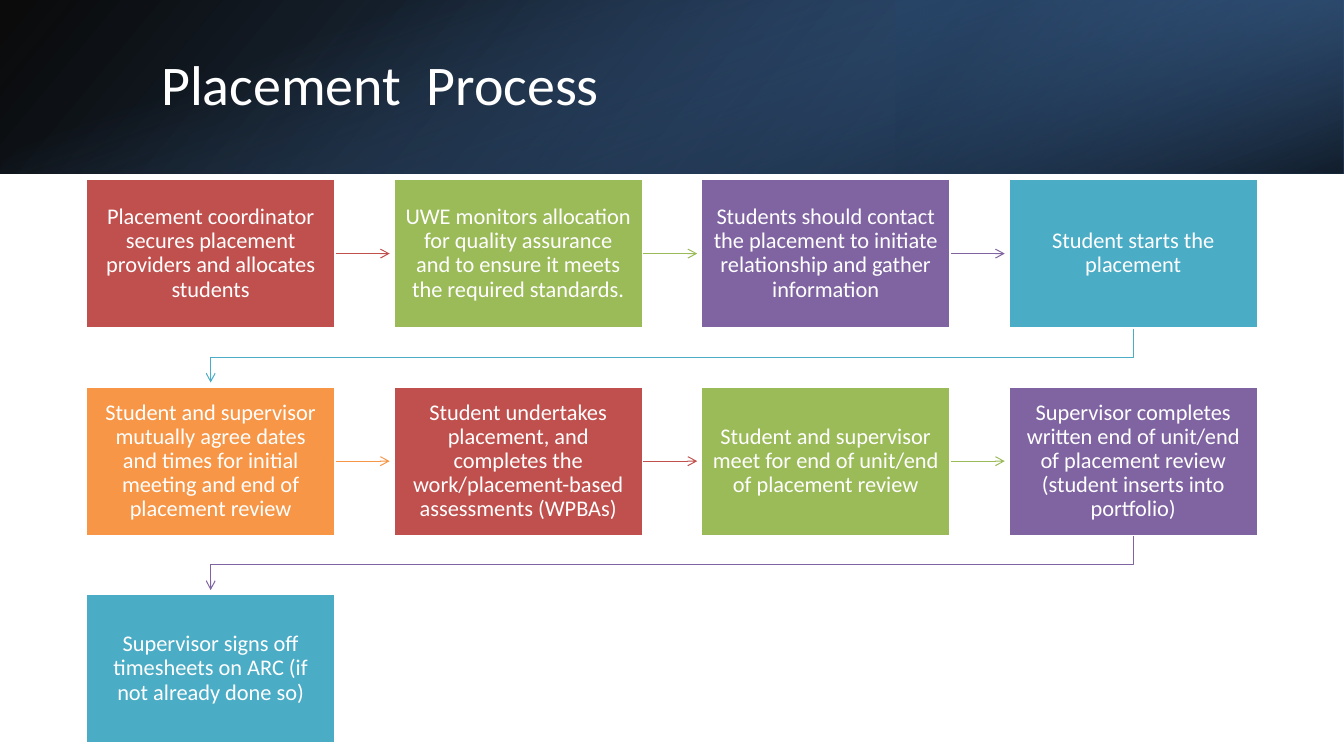
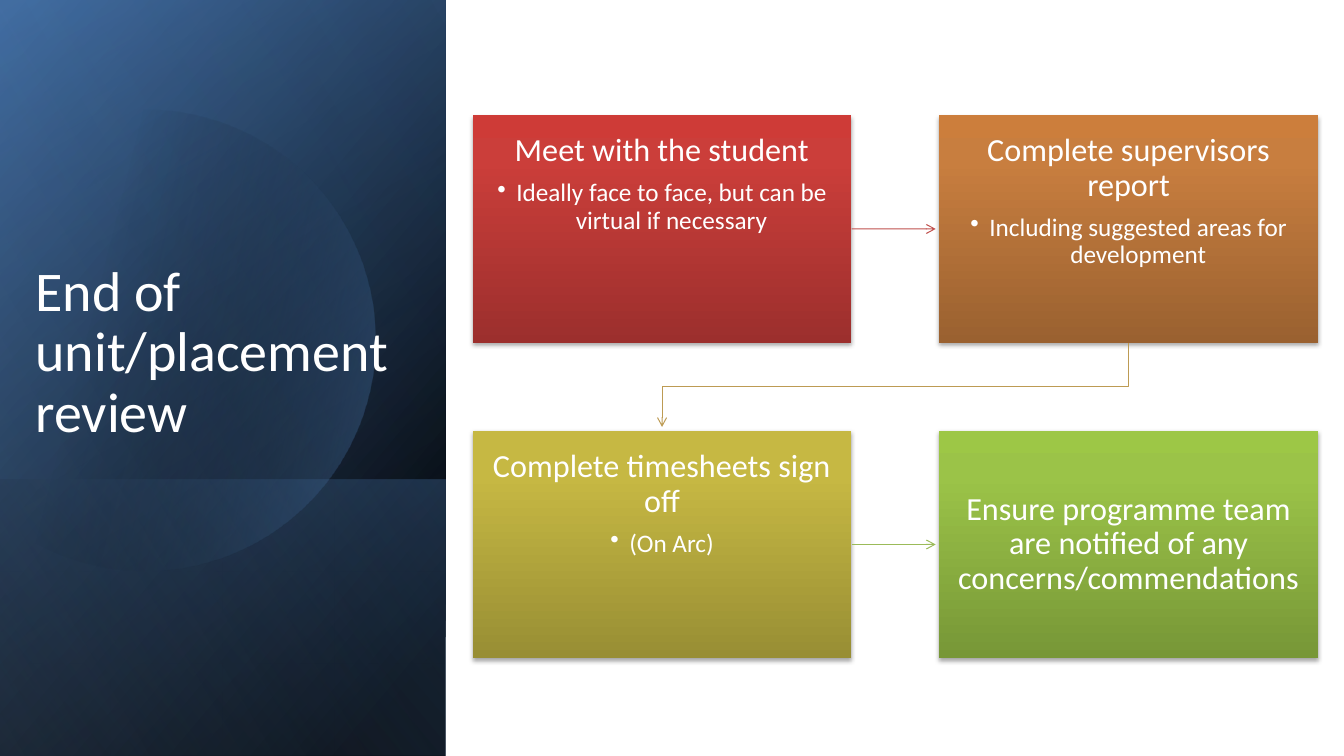
from dataclasses import dataclass
from math import acos, cos, sin
from typing import Any, Optional

from lxml.etree import SubElement
from pptx import Presentation
from pptx.dml.color import RGBColor
from pptx.enum.shapes import MSO_CONNECTOR, MSO_SHAPE
from pptx.enum.text import MSO_ANCHOR, MSO_AUTO_SIZE, PP_ALIGN
from pptx.oxml.ns import qn
from pptx.util import Cm, Pt

COLORS = {
    "white": "FFFFFF", "black": "000000", "navy": "376092", "deep": "254061",
    "blue": "4F81BD", "pale": "95B3D7", "red": "C0504D", "green": "9BBB59",
    "purple": "8064A2", "teal": "4BACC6", "orange": "F79646", "gold": "BD9B53",
    "red_low": "9C2F2D", "red_mid": "CB3E3A", "red_top": "CE3B37",
    "copper_low": "9A6130", "copper_mid": "C87E3F", "copper_top": "CC7E3C",
    "olive_low": "988E34", "olive_mid": "C6B843", "olive_top": "C9BB41",
    "lime_low": "779737", "lime_mid": "9BC348", "lime_top": "9DC746",
}
SLIDE_W, SLIDE_H = 33.87, 19.05
HEADER_H, PANEL_W = 4.37, 11.23
ARROW_GAP = 0.09
FONT = "Calibri"
TITLE_FRAME = {"word_wrap": True, "auto_size": MSO_AUTO_SIZE.NONE}
TITLE_PARA = {"alignment": PP_ALIGN.LEFT, "line_spacing": 0.9}
STEP_PARA = {"alignment": PP_ALIGN.CENTER, "line_spacing": 0.9}


@dataclass
class Gradient:
    stops: list[tuple[int, str, int]]
    angle: int


@dataclass
class Band:
    left: float
    top: float
    width: float
    height: float
    gradient: Gradient
    turn: int = 0
    flip: bool = True


@dataclass
class Step:
    text: str
    color: str
    detail: Optional[str] = None
    shade: Optional[str] = None


@dataclass
class Flow:
    left: float
    top: float
    width: float
    height: float
    gap_x: float
    gap_y: float
    cols: int
    inset_x: float
    inset_y: float
    size: int


HEADER_BANDS = [
    Band(0, 0, SLIDE_W, HEADER_H,
         Gradient([(0, "black", 96), (100, "navy", 100)], 140)),
    Band(22.58, 0, SLIDE_W - 22.58, HEADER_H,
         Gradient([(19, "deep", 68), (100, "blue", 79)], 320), 180),
    Band(0, 0, SLIDE_W, HEADER_H,
         Gradient([(23, "blue", 0), (99, "black", 74)], 340), 90, False),
]
PANEL_BANDS = [
    Band(0, 0, PANEL_W, SLIDE_H,
         Gradient([(8, "black", 100), (100, "navy", 100)], 50), 90),
    Band(0, 0, PANEL_W, SLIDE_H,
         Gradient([(0, "black", 0), (99, "blue", 46)], 30), 90),
    Band(0, 12.09, PANEL_W, 6.96,
         Gradient([(2, "blue", 29), (100, "black", 30)], 130), 90),
]
PANEL_VEIL = Band(0, 0, PANEL_W, SLIDE_H,
                  Gradient([(0, "black", 0), (99, "pale", 11)], 120), 90)
DISC = Gradient([(29, "black", 0), (100, "blue", 43)], 14)

PROCESS = Flow(2.16, 4.5, 6.3, 3.78, 1.45, 1.45, 4, 0.3, 0.33, 16)
PROCESS_STEPS = [
    Step("Placement coordinator secures placement providers and allocates students", "red"),
    Step("UWE monitors allocation for quality assurance and to ensure it meets "
         "the required standards.", "green"),
    Step("Students should contact the placement to initiate relationship and "
         "gather information", "purple"),
    Step("Student starts the placement", "teal"),
    Step("Student and supervisor mutually agree dates and times for initial "
         "meeting and end of placement review", "orange"),
    Step("Student undertakes placement, and completes the work/placement-based "
         "assessments (WPBAs)", "red"),
    Step("Student and supervisor meet for end of unit/end of placement review", "green"),
    Step("Supervisor completes written end of unit/end of placement review "
         "(student inserts into portfolio)", "purple"),
    Step("Supervisor signs off timesheets on ARC (if not already done so)", "teal"),
]
REVIEW = Flow(11.91, 2.9, 9.55, 5.74, 2.21, 2.21, 2, 0.46, 0.48, 23)
REVIEW_STEPS = [
    Step("Meet with the student", "red",
         "Ideally face to face, but can be virtual if necessary", "red"),
    Step("Complete supervisors report", "gold",
         "Including suggested areas for development", "copper"),
    Step("Complete timesheets sign off", "green", "(On Arc)", "olive"),
    Step("Ensure programme team are notified of any concerns/commendations",
         "green", None, "lime"),
]


def put(target: Any, values: dict[str, Any]) -> None:
    for name, value in values.items():
        setattr(target, name, value)


def rgb(name: str) -> RGBColor:
    return RGBColor.from_string(COLORS[name])


def write(p: Any, text: str, size: int, fmt: dict[str, Any]) -> None:
    put(p, fmt)
    r = p.add_run()
    r.text = text
    put(r.font, {"name": FONT, "size": Pt(size)})
    r.font.color.rgb = rgb("white")


def fill_gradient(sp: Any, gradient: Gradient) -> None:
    sp.fill.background()
    grad = sp.element.spPr.find(qn("a:noFill"))
    grad.tag = qn("a:gradFill")
    grad.set("rotWithShape", "1")
    stops = SubElement(grad, qn("a:gsLst"))
    for pos, color, opacity in gradient.stops:
        gs = SubElement(stops, qn("a:gs"), pos=str(pos * 1000))
        clr = SubElement(gs, qn("a:srgbClr"), val=COLORS[color])
        if opacity < 100:
            SubElement(clr, qn("a:alpha"), val=str(opacity * 1000))
    SubElement(grad, qn("a:lin"), ang=str(gradient.angle * 60000), scaled="0")


def add_band(slide: Any, band: Band) -> None:
    w, h = band.width, band.height
    if band.turn == 90:
        w, h = h, w
    left = band.left + (band.width - w) / 2
    top = band.top + (band.height - h) / 2
    sp = slide.shapes.add_shape(MSO_SHAPE.RECTANGLE, Cm(left), Cm(top), Cm(w), Cm(h))
    sp.shadow.inherit = False
    sp.line.fill.background()
    sp.rotation = band.turn
    if band.flip:
        sp.element.spPr.xfrm.set("flipH", "1")
    fill_gradient(sp, band.gradient)


def add_outline(slide: Any, points: list[tuple[float, float]], close: bool) -> Any:
    pts = [(Cm(x), Cm(y)) for x, y in points]
    builder = slide.shapes.build_freeform(*pts[0])
    builder.add_line_segments(pts[1:], close=close)
    sp = builder.convert_to_shape()
    sp.shadow.inherit = False
    return sp


def add_disc(slide: Any) -> None:
    cx, cy, radius, parts = 3.66, 8.57, 5.8, 120
    reach = acos(-cx / radius)
    angles = [reach * (2 * i / parts - 1) for i in range(parts + 1)]
    sp = add_outline(slide, [(cx + radius * cos(a), cy + radius * sin(a))
                             for a in angles], True)
    sp.line.fill.background()
    fill_gradient(sp, DISC)


def set_title(slide: Any, text: str, box: tuple[float, float, float, float],
              anchor: MSO_ANCHOR) -> None:
    sp = slide.shapes.title
    put(sp, dict(zip(("left", "top", "width", "height"), map(Cm, box))))
    put(sp.text_frame, TITLE_FRAME | {"vertical_anchor": anchor})
    write(sp.text_frame.paragraphs[0], text, 40, TITLE_PARA)
    sp.element.getparent().append(sp.element)


def add_step(slide: Any, flow: Flow, step: Step, x: float, y: float) -> Any:
    sp = slide.shapes.add_shape(MSO_SHAPE.RECTANGLE, Cm(x), Cm(y),
                                Cm(flow.width), Cm(flow.height))
    sp.shadow.inherit = False
    if step.shade:
        fill_gradient(sp, Gradient([(0, f"{step.shade}_low", 100),
                                    (80, f"{step.shade}_mid", 100),
                                    (100, f"{step.shade}_top", 100)], 270))
        sp.line.fill.background()
        shadow = SubElement(sp.element.spPr.find(qn("a:effectLst")), qn("a:outerShdw"),
                            blurRad="40000", dist="23000", dir="5400000", rotWithShape="0")
        clr = SubElement(shadow, qn("a:srgbClr"), val=COLORS["black"])
        SubElement(clr, qn("a:alpha"), val="35000")
    else:
        sp.fill.solid()
        sp.fill.fore_color.rgb = rgb(step.color)
        sp.line.color.rgb = rgb("white")
        sp.line.width = Pt(2)
    tf = sp.text_frame
    put(tf, {"word_wrap": True,
             "vertical_anchor": MSO_ANCHOR.TOP if step.detail else MSO_ANCHOR.MIDDLE,
             "margin_left": Cm(flow.inset_x), "margin_right": Cm(flow.inset_x),
             "margin_top": Cm(flow.inset_y), "margin_bottom": Cm(flow.inset_y)})
    write(tf.paragraphs[0], step.text, flow.size, STEP_PARA)
    if step.detail:
        tf.paragraphs[0].space_after = Pt(8)
        p = tf.add_paragraph()
        pPr = p._p.get_or_add_pPr()
        put(pPr, {"lvl": 1})
        pPr.set("marL", str(Cm(0.48)))
        pPr.set("indent", str(-Cm(0.48)))
        SubElement(pPr, qn("a:buChar"), char="•")
        write(p, step.detail, 18, STEP_PARA)
    return sp


def style_arrow(sp: Any, color: str) -> None:
    sp.line.color.rgb = rgb(color)
    sp.line.width = Pt(0.75)
    SubElement(sp.line._get_or_add_ln(), qn("a:tailEnd"), type="arrow")


def add_flow(slide: Any, flow: Flow, steps: list[Step]) -> None:
    spots = [(flow.left + i % flow.cols * (flow.width + flow.gap_x),
              flow.top + i // flow.cols * (flow.height + flow.gap_y))
             for i in range(len(steps))]
    boxes = [add_step(slide, flow, step, x, y) for step, (x, y) in zip(steps, spots)]
    for i, (step, (x, y)) in enumerate(zip(steps[:-1], spots)):
        if (i + 1) % flow.cols:
            right, mid = x + flow.width, y + flow.height / 2
            sp = slide.shapes.add_connector(
                MSO_CONNECTOR.STRAIGHT, Cm(right), Cm(mid),
                Cm(right + flow.gap_x - ARROW_GAP), Cm(mid))
            sp.begin_connect(boxes[i], 3)
            style_arrow(sp, step.color)
            SubElement(sp.element.spPr, qn("a:effectLst"))
        else:
            start, end = x + flow.width / 2, flow.left + flow.width / 2
            bottom = y + flow.height
            turn = bottom + flow.gap_y / 2
            sp = add_outline(slide, [(start, bottom), (start, turn), (end, turn),
                                     (end, bottom + flow.gap_y - ARROW_GAP)], False)
            sp.fill.background()
            style_arrow(sp, step.color)


def main() -> None:
    prs = Presentation()
    put(prs, {"slide_width": Cm(SLIDE_W), "slide_height": Cm(SLIDE_H)})
    layout = prs.slide_layouts[5]

    process = prs.slides.add_slide(layout)
    for band in HEADER_BANDS:
        add_band(process, band)
    set_title(process, "Placement  Process", (3.81, 0.97, 27.89, 2.44), MSO_ANCHOR.MIDDLE)
    add_flow(process, PROCESS, PROCESS_STEPS)

    review = prs.slides.add_slide(layout)
    for band in PANEL_BANDS:
        add_band(review, band)
    add_disc(review)
    add_band(review, PANEL_VEIL)
    set_title(review, "End of unit/placement review", (0.64, 4.67, 9.65, 6.65),
              MSO_ANCHOR.BOTTOM)
    add_flow(review, REVIEW, REVIEW_STEPS)

    prs.save("out.pptx")


if __name__ == "__main__":
    main()
